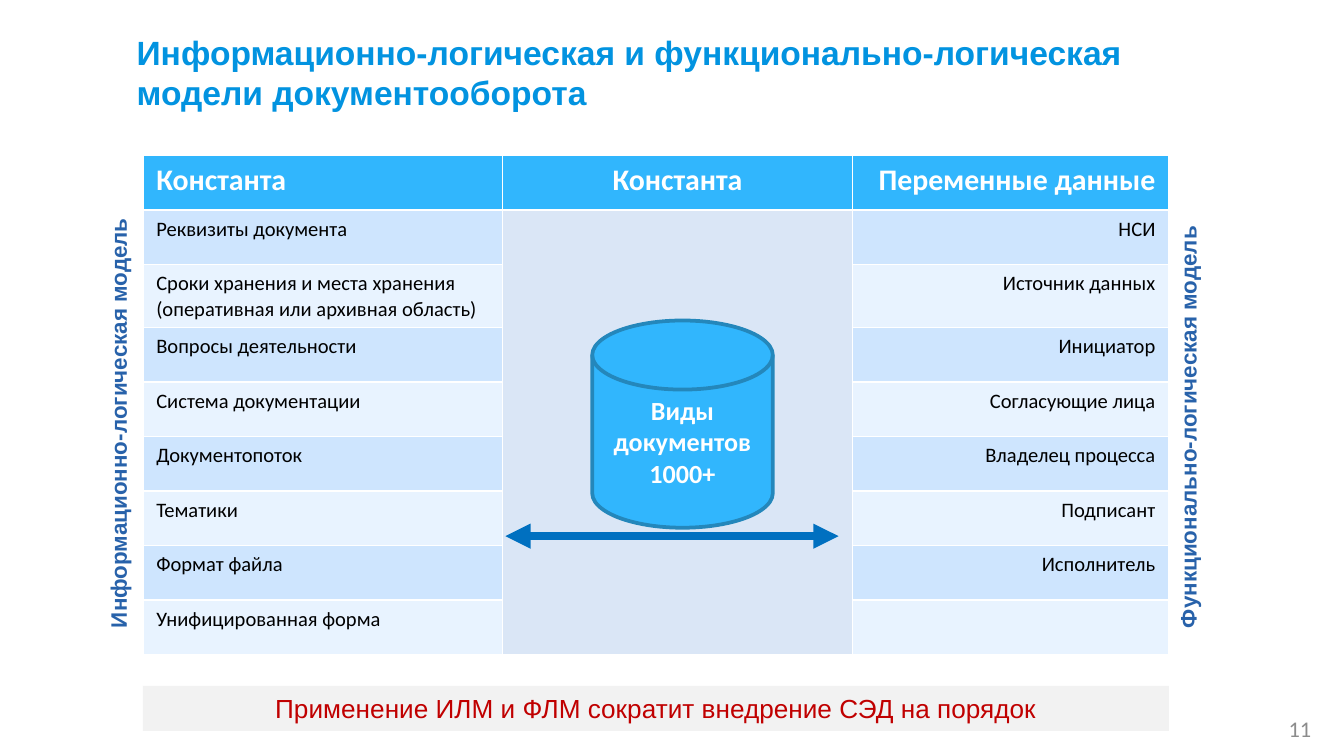
from lxml import etree
from pptx import Presentation
from pptx.dml.color import RGBColor
from pptx.enum.shapes import MSO_CONNECTOR, MSO_SHAPE
from pptx.enum.text import MSO_ANCHOR, PP_ALIGN
from pptx.oxml.ns import qn
from pptx.util import Pt

PX = 9525  # 96 px to the inch
LEFT, CENTER, RIGHT = PP_ALIGN.LEFT, PP_ALIGN.CENTER, PP_ALIGN.RIGHT
TOP, MIDDLE = MSO_ANCHOR.TOP, MSO_ANCHOR.MIDDLE
DISK, RECT = MSO_SHAPE.FLOWCHART_MAGNETIC_DISK, MSO_SHAPE.RECTANGLE

WHITE = RGBColor(0xFF, 0xFF, 0xFF)
BLACK = RGBColor(0, 0, 0)
GRAY = RGBColor(0x8C, 0x8C, 0x8C)
LIGHT_GRAY = RGBColor(0xF2, 0xF2, 0xF2)
RED = RGBColor(0xC0, 0, 0)
TITLE_BLUE = RGBColor(0x02, 0x93, 0xE0)
SKY = RGBColor(0x31, 0xB6, 0xFD)
SKY_EDGE = RGBColor(0x24, 0x87, 0xBB)
ARROW_BLUE = RGBColor(0, 0x70, 0xC0)
LABEL_BLUE = RGBColor(0x28, 0x62, 0xAA)
BAND_DARK = RGBColor(0xCE, 0xE5, 0xFE)
BAND_LIGHT = RGBColor(0xE8, 0xF3, 0xFF)
MERGED_FILL = RGBColor(0xDA, 0xE6, 0xF6)


def box(*lengths):
    """Turn px lengths into EMU."""
    return [n * PX for n in lengths]


def write(tf, text, size, color, name="Calibri", bold=False, align=LEFT, anchor=TOP):
    tf.word_wrap = True
    tf.vertical_anchor = anchor
    tf.text = text
    font_format = {"size": Pt(size), "name": name, "bold": bold}
    for p in tf.paragraphs:
        p.alignment = align
        for font in [p.font] + [r.font for r in p.runs]:
            for key, value in font_format.items():
                setattr(font, key, value)
            font.color.rgb = color


prs = Presentation()
prs.slide_width, prs.slide_height = box(960, 540)
s = prs.slides.add_slide(prs.slide_layouts[5])

# Title
title = s.shapes.title
title.left, title.top, title.width, title.height = box(88, 18, 804, 68)
write(title.text_frame,
      "Информационно-логическая и функционально-логическая модели документооборота",
      18, TITLE_BLUE, "Arial", True)

# Slide number
sp = s.shapes.add_textbox(*box(722, 506, 224, 29))
write(sp.text_frame, "11", 12, GRAY, align=RIGHT, anchor=MIDDLE)

# Table
rows = [
    ("Константа", "Константа", "Переменные данные"),
    ("Реквизиты документа", "", "НСИ"),
    ("Сроки хранения и места хранения (оперативная или архивная область)", "",
     "Источник данных"),
    ("Вопросы деятельности", "", "Инициатор"),
    ("Система документации", "", "Согласующие лица"),
    ("Документопоток", "", "Владелец процесса"),
    ("Тематики", "", "Подписант"),
    ("Формат файла", "", "Исполнитель"),
    ("Унифицированная форма", "", ""),
]
table = s.shapes.add_table(len(rows), 3, *box(102, 111, 733, 351)).table
for col, width in zip(table.columns, (257, 250, 226)):
    col.width = width * PX
for i, row in enumerate(rows):
    table.rows[i].height = 39 * PX
    for j, (text, align) in enumerate(zip(row, (LEFT, CENTER, RIGHT))):
        cell = table.cell(i, j)
        cell.fill.solid()
        if i == 0:
            cell.fill.fore_color.rgb = SKY
            write(cell.text_frame, text, 16, WHITE, bold=True, align=align)
        else:
            band = BAND_DARK if i % 2 else BAND_LIGHT
            cell.fill.fore_color.rgb = MERGED_FILL if j == 1 else band
            write(cell.text_frame, text, 11, BLACK, align=align)
table.cell(1, 1).merge(table.cell(len(rows) - 1, 1))

# Document store
disk = s.shapes.add_shape(DISK, *box(423, 229, 129, 148))
disk.shadow.inherit = False
disk.fill.solid()
disk.fill.fore_color.rgb = SKY
disk.line.color.rgb = SKY_EDGE
disk.line.width = Pt(2)
write(disk.text_frame, "Виды документов\n1000+", 14, WHITE, bold=True,
      align=CENTER, anchor=MIDDLE)

# Double arrow
arrow = s.shapes.add_connector(MSO_CONNECTOR.STRAIGHT, *box(361, 383, 599, 383))
arrow.line.color.rgb = ARROW_BLUE
arrow.line.width = Pt(4.5)
ln = arrow.line._get_or_add_ln()
for end in ("a:headEnd", "a:tailEnd"):
    etree.SubElement(ln, qn(end), type="triangle")
etree.SubElement(arrow._element.spPr, qn("a:effectLst"))

# Side labels
for x, text in ((-84, "Информационно-логическая модель"),
                (680, "Функционально-логическая модель")):
    sp = s.shapes.add_textbox(*box(x, 275, 337, 29))
    sp.rotation = 270
    write(sp.text_frame, text, 12, LABEL_BLUE, "Arial", True)

# Conclusion
bar = s.shapes.add_shape(RECT, *box(102, 490, 733, 32))
bar.shadow.inherit = False
bar.fill.solid()
bar.fill.fore_color.rgb = LIGHT_GRAY
bar.line.fill.background()
write(bar.text_frame, "Применение ИЛМ и ФЛМ сократит внедрение СЭД на порядок",
      14, RED, "Arial", align=CENTER, anchor=MIDDLE)

prs.save("out.pptx")
